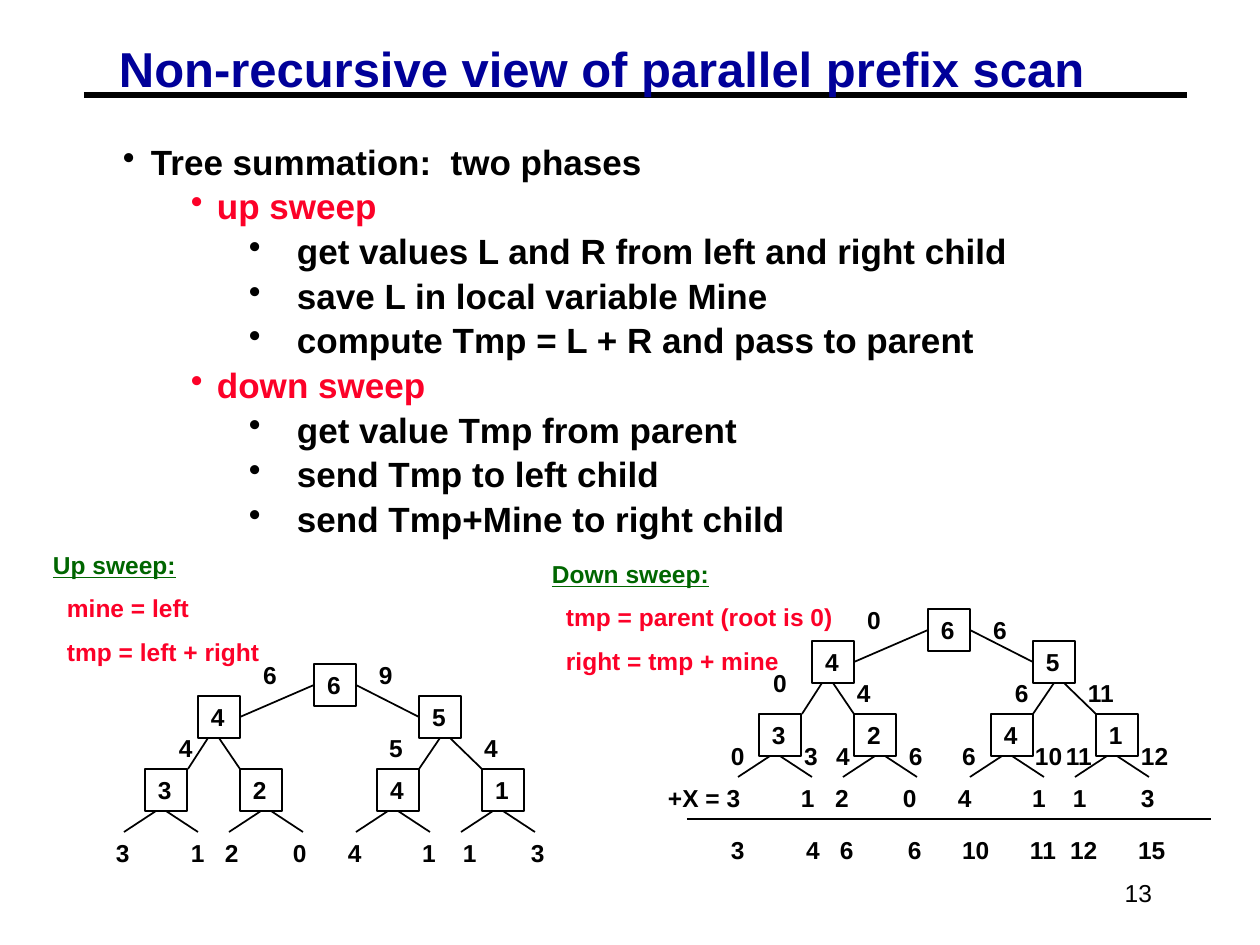
from lxml.etree import SubElement
from pptx import Presentation
from pptx.dml.color import RGBColor
from pptx.enum.shapes import MSO_CONNECTOR, MSO_SHAPE
from pptx.enum.text import MSO_ANCHOR, PP_ALIGN
from pptx.oxml.ns import qn
from pptx.util import Pt

EMU_PER_PX = 914400 / 126
COLORS = {"black": "000000", "white": "FFFFFF", "navy": "000099",
          "red": "FC0128", "green": "006600"}
FONT = "Arial"
NODE = 42
LEVEL_INDENTS = [(28, -28), (94, -26), (174, -48)]  # left margin, first line

BODY = [
    (0, "Tree summation:  two phases"),
    (1, "up sweep"),
    (2, "get values L and R from left and right child"),
    (2, "save L in local variable Mine"),
    (2, "compute Tmp = L + R and pass to parent"),
    (1, "down sweep"),
    (2, "get value Tmp from parent"),
    (2, "send Tmp to left child"),
    (2, "send Tmp+Mine to right child"),
]

# Tree geometry, measured from the top left corner of the root box
NODES = [("6", 0, 0), ("5", 105, 32), ("4", -116, 32), ("3", -169, 105),
         ("2", -74, 105), ("4", 63, 105), ("1", 168, 105)]
BRANCHES = [(0, 21, -74, 53), (42, 21, 105, 53),
            (-106, 74, -126, 105), (-95, 74, -74, 105),
            (126, 74, 105, 105), (136, 74, 168, 105)]
LEAF_FORKS = [-158, -53, 74, 179]

# Edge labels: text, left, top, width
UP_LABELS = [("4", 166, 727, 42), ("6", 250, 654, 42), ("9", 366, 654, 42),
             ("5", 376, 727, 42), ("4", 471, 727, 42)]
DOWN_LABELS = [("0", 854, 599, 42), ("6", 980, 609, 42), ("0", 760, 662, 42),
               ("4", 844, 672, 42), ("6", 1002, 672, 42), ("11", 1075, 672, 53),
               ("0", 718, 735, 42), ("3", 791, 735, 42), ("4", 823, 735, 42),
               ("6", 896, 735, 42), ("6", 949, 735, 42), ("10", 1022, 735, 63),
               ("11", 1053, 735, 53), ("12", 1128, 735, 63)]
INPUTS = ["3", "1", "2", "0", "4", "1", "1", "3"]
INPUT_TABS = [75, 109, 177, 232, 306, 347, 415]
PREFIX_WIDTH = 58
SUMS = ["3", "4", "6", "6", "10", "11", "12", "15"]
SUM_TABS = [75, 109, 177, 231, 299, 339, 407]


def px(length):
    return round(length * EMU_PER_PX)


def color(name):
    return RGBColor.from_string(COLORS[name])


def add_span(para, text, size=14, tint="black", bold=True, underline=False):
    span = para.add_run()
    span.text = text
    font = span.font
    font.name, font.size, font.bold = FONT, Pt(size), bold
    font.underline = underline
    font.color.rgb = color(tint)


def add_box(page, left, top, width, height, margins=(13, 6)):
    """Add an empty wrapping text box and return its text frame."""
    frame = page.shapes.add_textbox(px(left), px(top), px(width), px(height)).text_frame
    frame.word_wrap = True
    frame.margin_left = frame.margin_right = px(margins[0])
    frame.margin_top = frame.margin_bottom = px(margins[1])
    return frame


def set_indent(para, left, first=0):
    properties = para._p.get_or_add_pPr()
    properties.set("marL", str(px(left)))
    properties.set("indent", str(px(first)))
    return properties


def add_line(page, x1, y1, x2, y2, width=1):
    line = page.shapes.add_connector(MSO_CONNECTOR.STRAIGHT, px(x1), px(y1), px(x2), px(y2))
    line.line.color.rgb = color("black")
    line.line.width = Pt(width)
    SubElement(line._element.spPr, qn("a:effectLst"))


def add_label(page, text, left, top, width):
    add_span(add_box(page, left, top, width, 42).paragraphs[0], text)


def add_node(page, text, left, top):
    node = page.shapes.add_shape(MSO_SHAPE.RECTANGLE, px(left), px(top), px(NODE), px(NODE))
    node.shadow.inherit = False
    node.fill.background()
    node.line.color.rgb = color("black")
    node.line.width = Pt(1)
    frame = node.text_frame
    frame.word_wrap = True
    frame.vertical_anchor = MSO_ANCHOR.TOP
    frame.margin_left = frame.margin_right = px(13)
    frame.margin_top = frame.margin_bottom = px(6)
    para = frame.paragraphs[0]
    para.alignment = PP_ALIGN.LEFT
    add_span(para, text)


def add_tree(page, left, top):
    for text, x, y in NODES:
        add_node(page, text, left + x, top + y)
    for x1, y1, x2, y2 in BRANCHES:
        add_line(page, left + x1, top + y1, left + x2, top + y2)
    for x in LEAF_FORKS:
        fork = left + x
        add_line(page, fork, top + 147, fork - 32, top + 168)
        add_line(page, fork + 10, top + 147, fork + 42, top + 168)


def add_number_row(page, left, top, width, numbers, tabs):
    """Add one line of numbers set on tab stops."""
    para = add_box(page, left, top, width, 42).paragraphs[0]
    stops = SubElement(para._p.get_or_add_pPr(), qn("a:tabLst"))
    for tab in tabs:
        SubElement(stops, qn("a:tab"), pos=str(px(tab)), algn="l")
    add_span(para, "\t".join(numbers))


def add_rules(page, left, top, heading, rules):
    """Add an underlined heading with its indented rules below."""
    frame = add_box(page, left, top, 378, 130)
    add_span(frame.paragraphs[0], heading, tint="green", underline=True)
    for rule in rules:
        para = frame.add_paragraph()
        para.space_before = Pt(8)
        set_indent(para, 14)
        add_span(para, rule, tint="red")


def add_title(page, text):
    add_line(page, 84, 95, 1187, 95, 3.75)
    para = add_box(page, 110, 43, 1076, 58, (9, 4)).paragraphs[0]
    para.line_spacing = 0.87
    add_span(para, text, 28, "navy")


def add_body(page):
    frame = add_box(page, 110, 139, 1080, 407)
    for index, (level, text) in enumerate(BODY):
        para = frame.add_paragraph() if index else frame.paragraphs[0]
        para.level = level
        para.line_spacing = 0.9
        if index:
            para.space_before = Pt(3.9)
        properties = set_indent(para, *LEVEL_INDENTS[level])
        SubElement(properties, qn("a:buChar"), char="•")
        add_span(para, text, 20, "red" if level == 1 else "black")


def add_page_number(page, text):
    frame = add_box(page, 903, 861, 262, 63)
    frame.vertical_anchor = MSO_ANCHOR.MIDDLE
    para = frame.paragraphs[0]
    para.alignment = PP_ALIGN.RIGHT
    add_span(para, text, bold=False)


def main():
    deck = Presentation()
    deck.slide_width, deck.slide_height = px(1260), px(945)
    page = deck.slides.add_slide(deck.slide_layouts[6])
    page.background.fill.solid()
    page.background.fill.fore_color.rgb = color("white")

    add_title(page, "Non-recursive view of parallel prefix scan")
    add_body(page)
    add_tree(page, 314, 664)
    add_tree(page, 928, 609)
    for label in UP_LABELS + DOWN_LABELS:
        add_label(page, *label)

    add_rules(page, 40, 544, "Up sweep:", ["mine = left", "tmp = left + right"])
    add_rules(page, 539, 553, "Down sweep:",
              ["tmp = parent (root is 0)", "right = tmp + mine"])
    add_number_row(page, 103, 832, 473, INPUTS, INPUT_TABS)
    add_number_row(page, 655, 777, 546, ["+X = " + INPUTS[0]] + INPUTS[1:],
                   [PREFIX_WIDTH + tab for tab in INPUT_TABS])
    add_line(page, 687, 819, 1211, 819)
    add_number_row(page, 718, 829, 473, SUMS, SUM_TABS)
    add_page_number(page, "13")
    deck.save("out.pptx")


if __name__ == "__main__":
    main()
